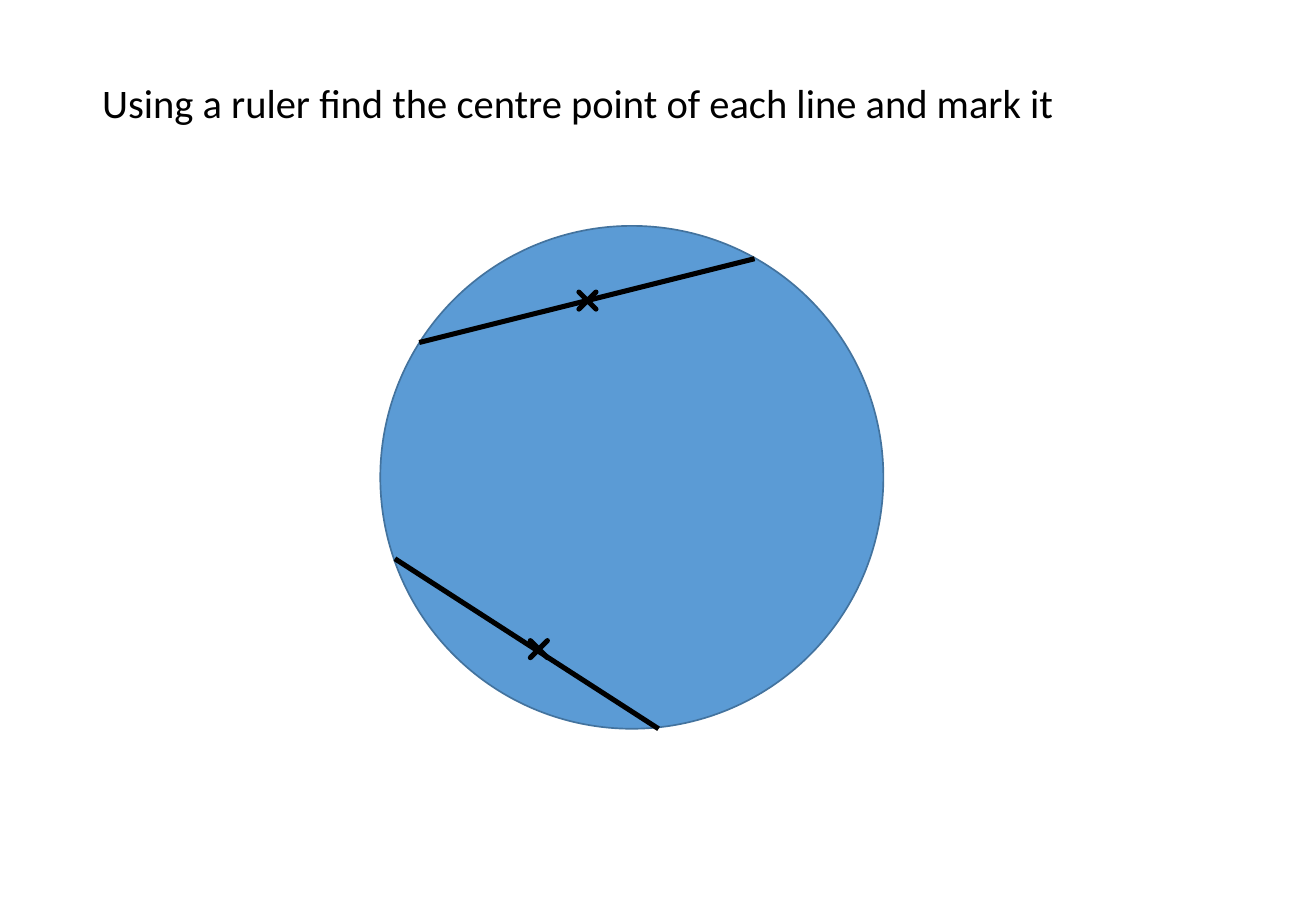
"""Build a slide showing a circle with two chords and their marked centre points."""
from dataclasses import dataclass

from lxml import etree
from pptx import Presentation
from pptx import util as u
from pptx.dml.color import RGBColor
from pptx.enum import shapes, text
from pptx.oxml.ns import qn


@dataclass(frozen=True)
class Theme:
    font: str = "Calibri"
    title_size: int = 24
    ink: RGBColor = RGBColor(0x00, 0x00, 0x00)
    circle: RGBColor = RGBColor(0x5B, 0x9B, 0xD5)
    outline: RGBColor = RGBColor(0x43, 0x73, 0x9E)
    thin: int = 1
    thick: int = 3


theme = Theme()

presentation = Presentation()
presentation.slide_width = u.Inches(10.83)
presentation.slide_height = u.Inches(7.5)
slide = presentation.slides.add_slide(presentation.slide_layouts[5])


def add_filled_shape(kind, left, top, size, line_color, line_width):
    """Add a square-framed shape in the circle colour."""
    shape = slide.shapes.add_shape(
        kind, u.Inches(left), u.Inches(top), u.Inches(size), u.Inches(size)
    )
    shape.shadow.inherit = False
    shape.fill.solid()
    shape.fill.fore_color.rgb = theme.circle
    shape.line.color.rgb = line_color
    shape.line.width = u.Pt(line_width)
    return shape


title = slide.shapes.title
title.left, title.top = u.Inches(0.74), u.Inches(0.4)
title.width, title.height = u.Inches(9.34), u.Inches(0.94)
title.text_frame.word_wrap = True
title.text_frame.vertical_anchor = text.MSO_ANCHOR.MIDDLE
paragraph = title.text_frame.paragraphs[0]
paragraph.alignment = text.PP_ALIGN.LEFT
paragraph.line_spacing = 0.9
run = paragraph.add_run()
run.text = "Using a ruler find the centre point of each line and mark it"
run.font.name = theme.font
run.font.size = u.Pt(theme.title_size)
run.font.color.rgb = theme.ink

add_filled_shape(shapes.MSO_SHAPE.OVAL, 3.13, 1.86, 4.14, theme.outline, theme.thin)

chords = [
    ((3.45, 2.82), (6.21, 2.13), (4.7, 2.34)),
    ((3.25, 4.6), (5.42, 6), (4.3, 5.21)),
]
for start, end, mark_corner in chords:
    chord = slide.shapes.add_connector(
        shapes.MSO_CONNECTOR.STRAIGHT, *map(u.Inches, start + end)
    )
    chord.line.color.rgb = theme.ink
    chord.line.width = u.Pt(theme.thick)
    etree.SubElement(chord.element.spPr, qn("a:effectLst"))

    mark = add_filled_shape(
        shapes.MSO_SHAPE.MATH_MULTIPLY, *mark_corner, 0.27, theme.ink, theme.thick
    )
    mark.adjustments[0] = 0

presentation.save("out.pptx")
